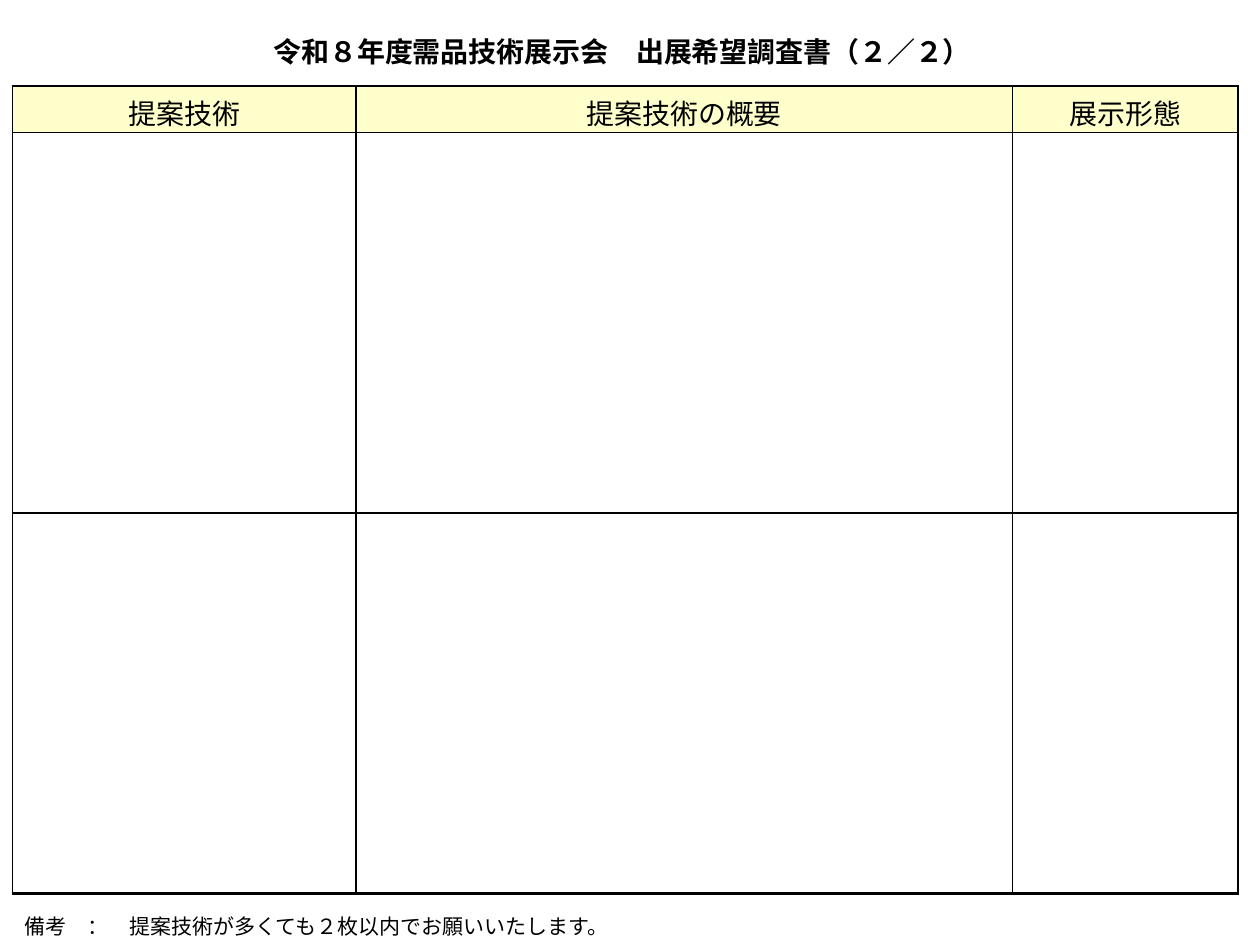
from dataclasses import dataclass

import pptx
import pptx.dml.color
import pptx.enum.text
import pptx.oxml
import pptx.oxml.ns
import pptx.util
from pptx.util import Cm

FONT = "Noto Sans CJK JP"
BLACK = "000000"
HEADER_FILL = "FFFFCC"
ROW_HEIGHTS = [0.94, 7.67, 7.67]
THIN, THICK = 1, 1.5


@dataclass
class Column:
    heading: str
    width: float


@dataclass
class TextLine:
    text: str
    left: float
    top: float
    width: float
    height: float
    size: float
    bold: bool = False


COLUMNS = [
    Column("提案技術", 6.93),
    Column("提案技術の概要", 13.23),
    Column("展示形態", 4.55),
]
TITLE = TextLine("令和８年度需品技術展示会　出展希望調査書（２／２）", 5.26, 0.56, 14.88, 0.94, 16, True)
REMARK = TextLine("備考　：　提案技術が多くても２枚以内でお願いいたします。", 0.25, 18.29, 12.47, 0.76, 12)


def color(value: str) -> pptx.dml.color.RGBColor:
    return pptx.dml.color.RGBColor.from_string(value)


def format_paragraph(paragraph, size: float, bold: bool, alignment) -> None:
    paragraph.alignment = alignment
    font = paragraph.font
    font.size = pptx.util.Pt(size)
    font.bold = bold
    font.color.rgb = color(BLACK)
    font.name = FONT
    properties = paragraph._p.pPr.find(pptx.oxml.ns.qn("a:defRPr"))
    east_asian = properties.makeelement(pptx.oxml.ns.qn("a:ea"), {"typeface": FONT})
    properties.append(east_asian)


def fill_text_line(shape, line: TextLine) -> None:
    shape.left, shape.top = Cm(line.left), Cm(line.top)
    shape.width, shape.height = Cm(line.width), Cm(line.height)
    frame = shape.text_frame
    frame.text = line.text
    frame.word_wrap = False
    frame.auto_size = pptx.enum.text.MSO_AUTO_SIZE.SHAPE_TO_FIT_TEXT
    frame.vertical_anchor = pptx.enum.text.MSO_ANCHOR.TOP
    format_paragraph(frame.paragraphs[0], line.size, line.bold, pptx.enum.text.PP_ALIGN.LEFT)


def set_borders(cell, right: float, bottom: float) -> None:
    properties = cell._tc.get_or_add_tcPr()
    widths = {"lnL": THIN, "lnR": right, "lnT": THIN, "lnB": bottom}
    for position, (tag, width) in enumerate(widths.items()):
        border = pptx.oxml.parse_xml(
            f'<a:{tag} {pptx.oxml.ns.nsdecls("a")} w="{pptx.util.Pt(width)}">'
            f'<a:solidFill><a:srgbClr val="{BLACK}"/></a:solidFill></a:{tag}>'
        )
        properties.insert(position, border)


def add_proposal_table(slide) -> None:
    width = sum(column.width for column in COLUMNS)
    table = slide.shapes.add_table(
        len(ROW_HEIGHTS), len(COLUMNS), Cm(0.25), Cm(1.73), Cm(width), Cm(sum(ROW_HEIGHTS))
    ).table
    table.first_row = False
    table.horz_banding = False
    for row, height in zip(table.rows, ROW_HEIGHTS):
        row.height = Cm(height)
    last_row, last_column = len(ROW_HEIGHTS) - 1, len(COLUMNS) - 1
    for column_index, column in enumerate(COLUMNS):
        table.columns[column_index].width = Cm(column.width)
        for row_index in range(len(ROW_HEIGHTS)):
            cell = table.cell(row_index, column_index)
            cell.fill.background()
            set_borders(
                cell,
                THICK if column_index == last_column else THIN,
                THICK if row_index == last_row else THIN,
            )
        header = table.cell(0, column_index)
        header.text = column.heading
        header.fill.solid()
        header.fill.fore_color.rgb = color(HEADER_FILL)
        header.vertical_anchor = pptx.enum.text.MSO_ANCHOR.MIDDLE
        header.margin_top, header.margin_bottom = Cm(0.13), Cm(0)
        format_paragraph(
            header.text_frame.paragraphs[0], 16, False, pptx.enum.text.PP_ALIGN.CENTER
        )


def main() -> None:
    presentation = pptx.Presentation()
    presentation.slide_width, presentation.slide_height = Cm(25.4), Cm(19.05)
    slide = presentation.slides.add_slide(presentation.slide_layouts.get_by_name("Title Only"))
    add_proposal_table(slide)
    fill_text_line(slide.shapes.add_textbox(0, 0, 0, 0), REMARK)
    fill_text_line(slide.shapes.title, TITLE)
    presentation.save("out.pptx")


if __name__ == "__main__":
    main()
